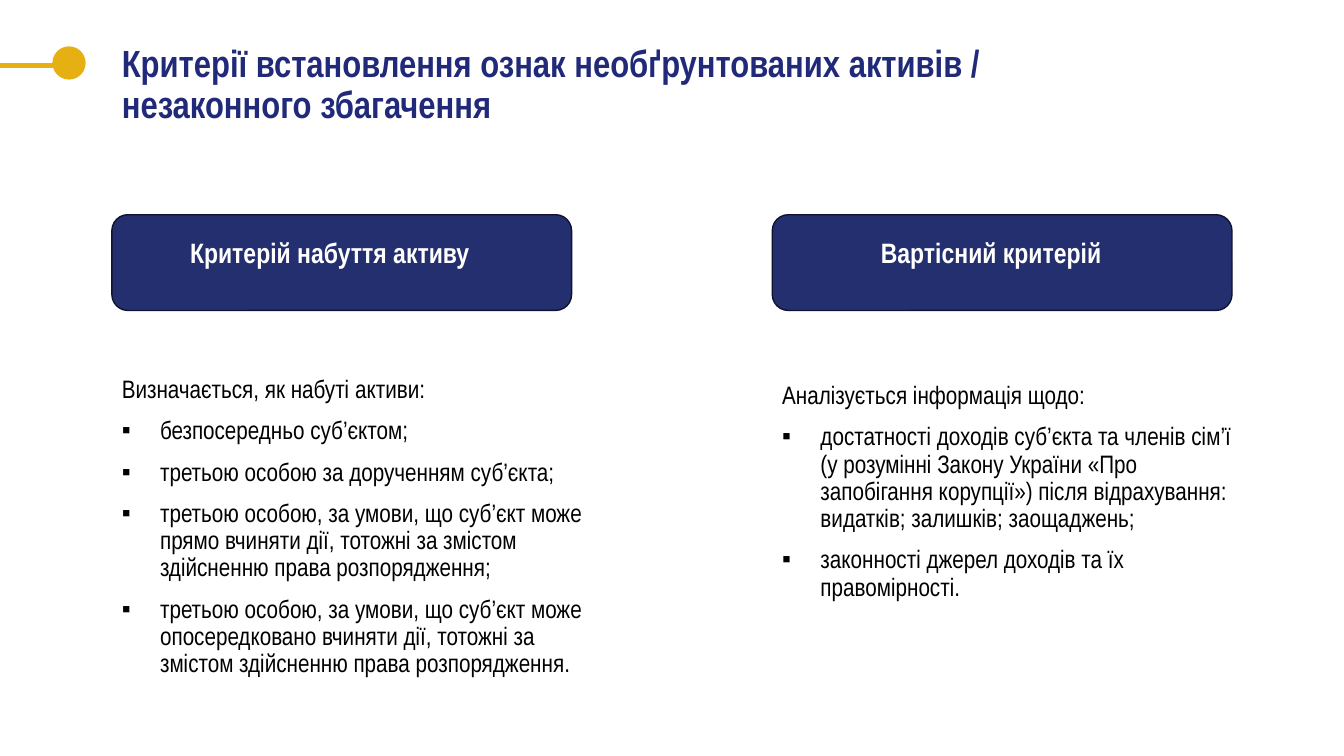
import pptx
import pptx.util
import pptx.dml.color
import pptx.enum.shapes
import pptx.enum.text
import pptx.oxml
import pptx.oxml.ns
from dataclasses import dataclass

Inches = pptx.util.Inches
Pt = pptx.util.Pt
Shape = pptx.enum.shapes.MSO_SHAPE
Align = pptx.enum.text.PP_ALIGN


@dataclass(frozen=True)
class Theme:
    font: str = "Arial Narrow"
    gold: str = "E6AF12"
    title: str = "202A78"
    navy: str = "242F6F"
    edge: str = "0F132E"
    white: str = "FFFFFF"
    black: str = "000000"
    big: int = 27
    mid: int = 20
    small: int = 18


def color(code):
    return pptx.dml.color.RGBColor.from_string(code)


def apply(target, values):
    for name, value in values.items():
        setattr(target, name, value)


class Page:
    """Holds the theme and the slide that is being filled."""

    def __init__(self, slide, theme):
        self.slide = slide
        self.theme = theme

    def line(self, start, end, tint, width):
        link = self.slide.shapes.add_connector(
            pptx.enum.shapes.MSO_CONNECTOR.STRAIGHT,
            *map(Inches, start + end))
        link.line.color.rgb = color(tint)
        link.line.width = Pt(width)
        link._element.spPr.append(
            pptx.oxml.parse_xml(f"<a:effectLst {pptx.oxml.ns.nsdecls('a')}/>"))

    def shape(self, kind, box, fill, edge=None):
        shape = self.slide.shapes.add_shape(kind, *map(Inches, box))
        shape.shadow.inherit = False
        shape.fill.solid()
        shape.fill.fore_color.rgb = color(fill)
        if edge:
            shape.line.color.rgb = color(edge)
            shape.line.width = Pt(1)
        else:
            shape.line.fill.background()

    def text(self, box, lines, size, tint, bold=False, bullets=False, **form):
        """Write one paragraph per line; bullets mark all but the first."""
        frame = self.slide.shapes.add_textbox(*map(Inches, box)).text_frame
        frame.word_wrap = True
        for index, words in enumerate(lines):
            para = frame.paragraphs[0] if index == 0 else frame.add_paragraph()
            apply(para, form)
            run = para.add_run()
            run.text = words
            apply(run.font, {"name": self.theme.font, "size": Pt(size),
                             "bold": bold})
            run.font.color.rgb = color(tint)
            if bullets and index:
                para.space_before = Pt(10)
                self.bullet(para)

    def bullet(self, para):
        props = para._p.get_or_add_pPr()
        indent = Inches(0.38)
        props.set("marL", str(indent))
        props.set("indent", str(-indent))
        space = pptx.oxml.ns.nsdecls("a")
        for mark in (f'<a:buClr {space}><a:srgbClr val="{self.theme.black}"/></a:buClr>',
                     f'<a:buFont {space} typeface="Arial"/>',
                     f'<a:buChar {space} char="▪"/>'):
            props.append(pptx.oxml.parse_xml(mark))

    def column(self, left, label, shift, top, lines):
        theme = self.theme
        self.shape(Shape.ROUNDED_RECTANGLE, (left, 2.13, 4.56, 0.95),
                   theme.navy, theme.edge)
        self.text((left + shift, 2.29, 3.78, 0.44), [label], theme.mid,
                  theme.white, bold=True, alignment=Align.CENTER)
        self.text((left, top, 4.86, 2.34), lines, theme.small, theme.black,
                  bullets=True, line_spacing=0.9)


COLUMNS = [
    (1.11, "Критерій набуття активу", 0.27, 3.69, [
        "Визначається, як набуті активи:",
        "безпосередньо суб’єктом;",
        "третьою особою за дорученням суб’єкта;",
        "третьою особою, за умови, що суб’єкт може прямо вчиняти дії, "
        "тотожні за змістом здійсненню права розпорядження;",
        "третьою особою, за умови, що суб’єкт може опосередковано вчиняти "
        "дії, тотожні за змістом здійсненню права розпорядження.",
    ]),
    (7.66, "Вартісний критерій", 0.28, 3.75, [
        "Аналізується інформація щодо:",
        "достатності доходів суб’єкта та членів сім’ї (у розумінні Закону "
        "України «Про запобігання корупції») після відрахування: видатків; "
        "залишків; заощаджень;",
        "законності джерел доходів та їх правомірності.",
    ]),
]


def main():
    deck = pptx.Presentation()
    apply(deck, {"slide_width": Inches(13.33), "slide_height": Inches(7.5)})
    theme = Theme()
    page = Page(deck.slides.add_slide(deck.slide_layouts[6]), theme)

    page.line((0.59, 0.65), (0, 0.65), theme.gold, 3)
    page.shape(Shape.OVAL, (0.52, 0.46, 0.33, 0.33), theme.gold)
    page.text((1.11, 0.4, 10.42, 0.6),
              ["Критерії встановлення ознак необґрунтованих активів / "
               "незаконного збагачення"],
              theme.big, theme.title, bold=True, line_spacing=0.9)
    for column in COLUMNS:
        page.column(*column)
    deck.save("out.pptx")


if __name__ == "__main__":
    main()
